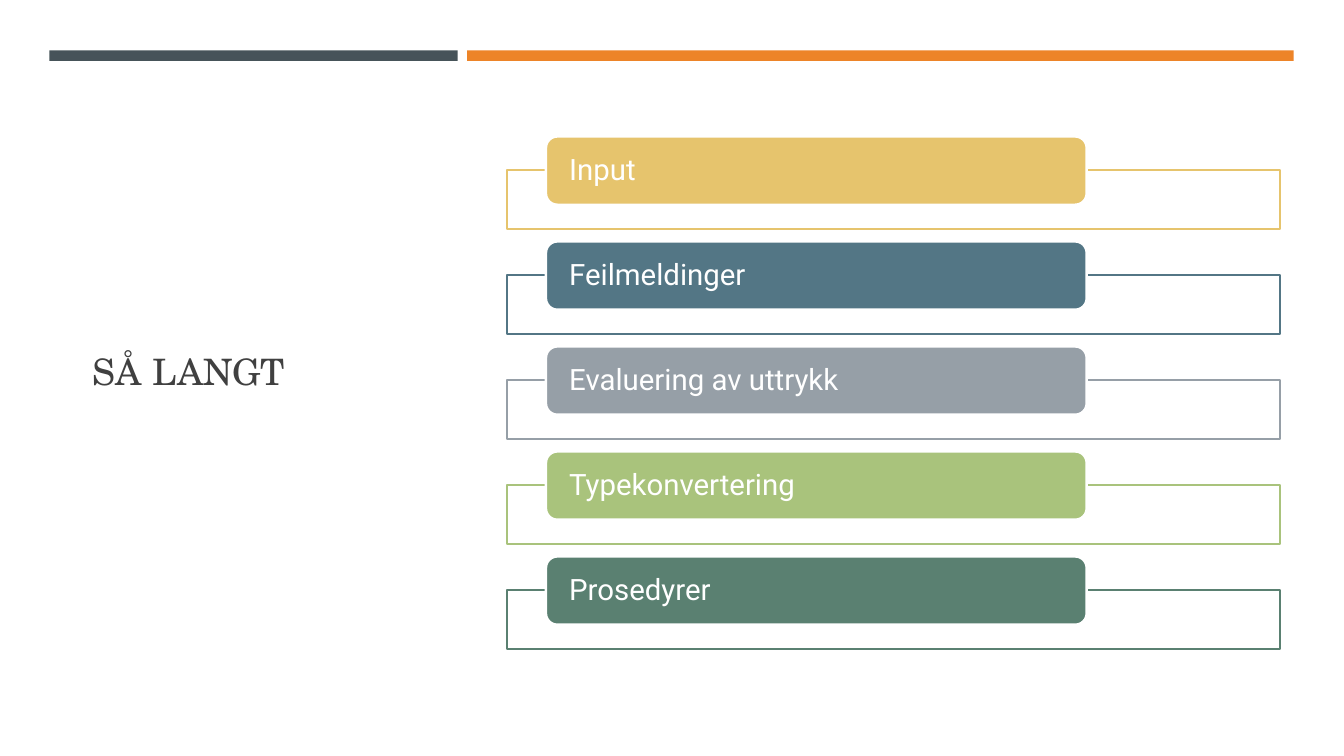
from lxml.etree import SubElement
from pptx import Presentation
from pptx.dml.color import RGBColor
from pptx.enum.shapes import MSO_SHAPE
from pptx.enum.text import MSO_ANCHOR, PP_ALIGN
from pptx.oxml.ns import qn
from pptx.util import Emu, Pt

COLORS = {
    "white": "FFFFFF",
    "title": "404040",
    "slate": "465359",
    "orange": "ED8428",
    "yellow": "E6C46D",
    "blue": "537685",
    "grey": "969FA7",
    "green": "A9C37C",
    "teal": "5A8071",
}
TOPICS = [
    ("Input", "yellow"),
    ("Feilmeldinger", "blue"),
    ("Evaluering av uttrykk", "grey"),
    ("Typekonvertering", "green"),
    ("Prosedyrer", "teal"),
]
EMU_PER_PX = 9525
FIRST_TOP = 130
TOPIC_PITCH = 100


def px(length):
    """Turn whole pixels into EMU."""
    return Emu(length * EMU_PER_PX)


def color(name):
    """Look up a named colour."""
    return RGBColor.from_string(COLORS[name])


def add_block(page, kind, bounds, fill, line=None):
    """Add a filled shape, outlined if a line colour is given."""
    block = page.shapes.add_shape(kind, *map(px, bounds))
    block.shadow.inherit = False
    block.fill.solid()
    block.fill.fore_color.rgb = color(fill)
    if line:
        block.line.color.rgb = color(line)
        block.line.width = Pt(1.75)
    else:
        block.line.fill.background()
    return block


def set_opacity(block, percent):
    """Make the solid fill of a shape partly transparent."""
    fill = block.element.spPr.find(qn("a:solidFill"))
    SubElement(fill[0], qn("a:alpha"), val=str(percent * 1000))


def write_text(box, text, font_name, size, font_color):
    """Write one left-aligned, vertically centred paragraph."""
    frame = box.text_frame
    frame.word_wrap = True
    frame.vertical_anchor = MSO_ANCHOR.MIDDLE
    para = frame.paragraphs[0]
    para.text = text
    para.alignment = PP_ALIGN.LEFT
    para.line_spacing = 0.9
    para.font.name = font_name
    para.font.size = Pt(size)
    para.font.color.rgb = color(font_color)


def add_title(page, text):
    """Add the slide title in the left column."""
    box = page.shapes.add_textbox(*map(px, (79, 109, 321, 494)))
    write_text(box, text, "TeX Gyre Schola", 26, "title")


def add_topic(page, top, text, accent):
    """Add an outlined frame with a rounded label across its top edge."""
    frame = add_block(page, MSO_SHAPE.RECTANGLE, (483, top + 32, 736, 56), "white", accent)
    set_opacity(frame, 90)
    label = add_block(page, MSO_SHAPE.ROUNDED_RECTANGLE, (520, top, 515, 65), accent, "white")
    label.text_frame.margin_left = label.text_frame.margin_right = px(19)
    label.text_frame.margin_top = label.text_frame.margin_bottom = 0
    write_text(label, text, "Roboto", 21, "white")


def main():
    """Build and save the slide."""
    deck = Presentation()
    deck.slide_width, deck.slide_height = px(1280), px(720)
    page = deck.slides.add_slide(deck.slide_layouts[6])
    add_title(page, "SÅ LANGT")
    add_block(page, MSO_SHAPE.RECTANGLE, (47, 48, 389, 10), "slate")
    add_block(page, MSO_SHAPE.RECTANGLE, (445, 48, 787, 10), "orange")
    for index, (text, accent) in enumerate(TOPICS):
        add_topic(page, FIRST_TOP + index * TOPIC_PITCH, text, accent)
    deck.save("out.pptx")


if __name__ == "__main__":
    main()
